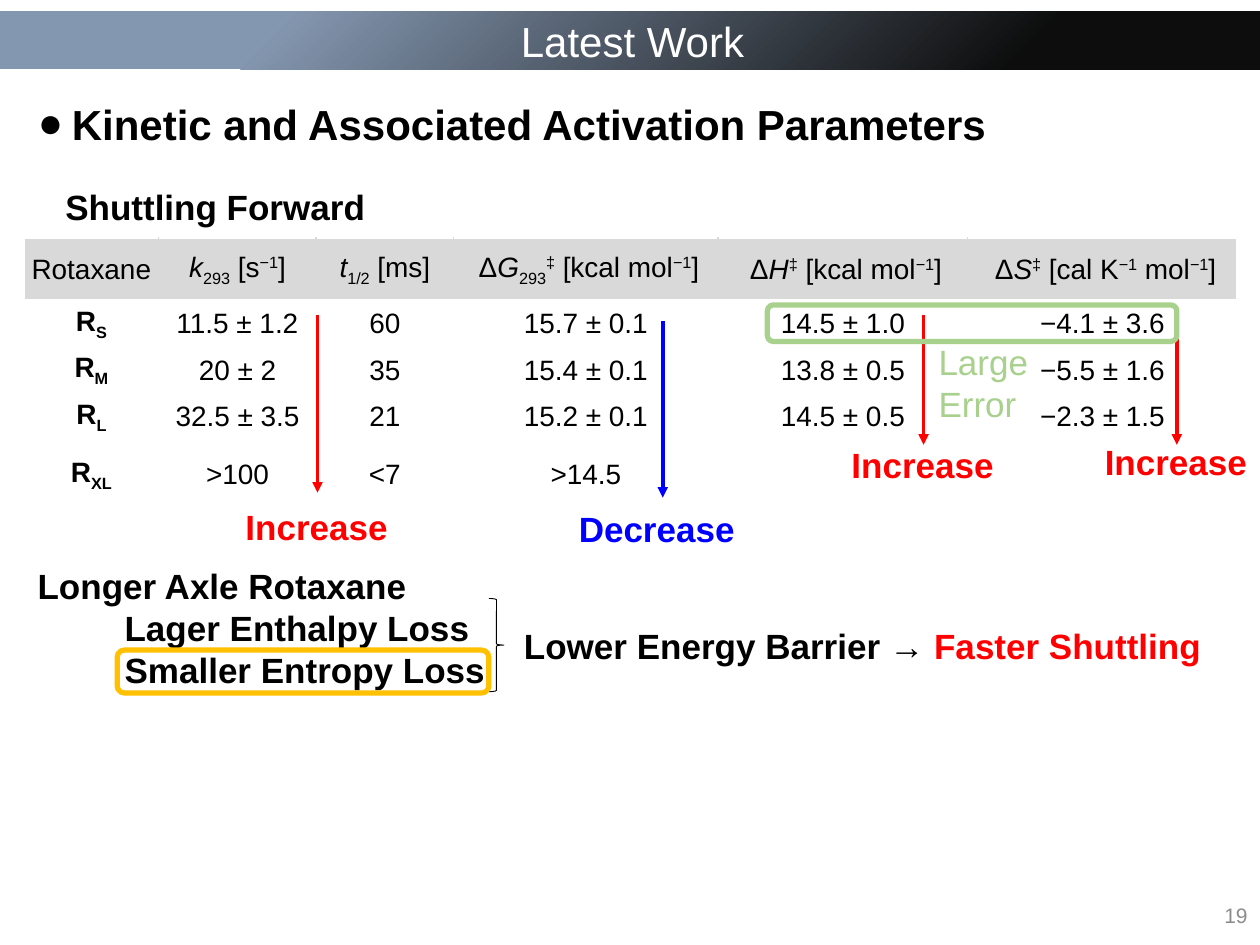
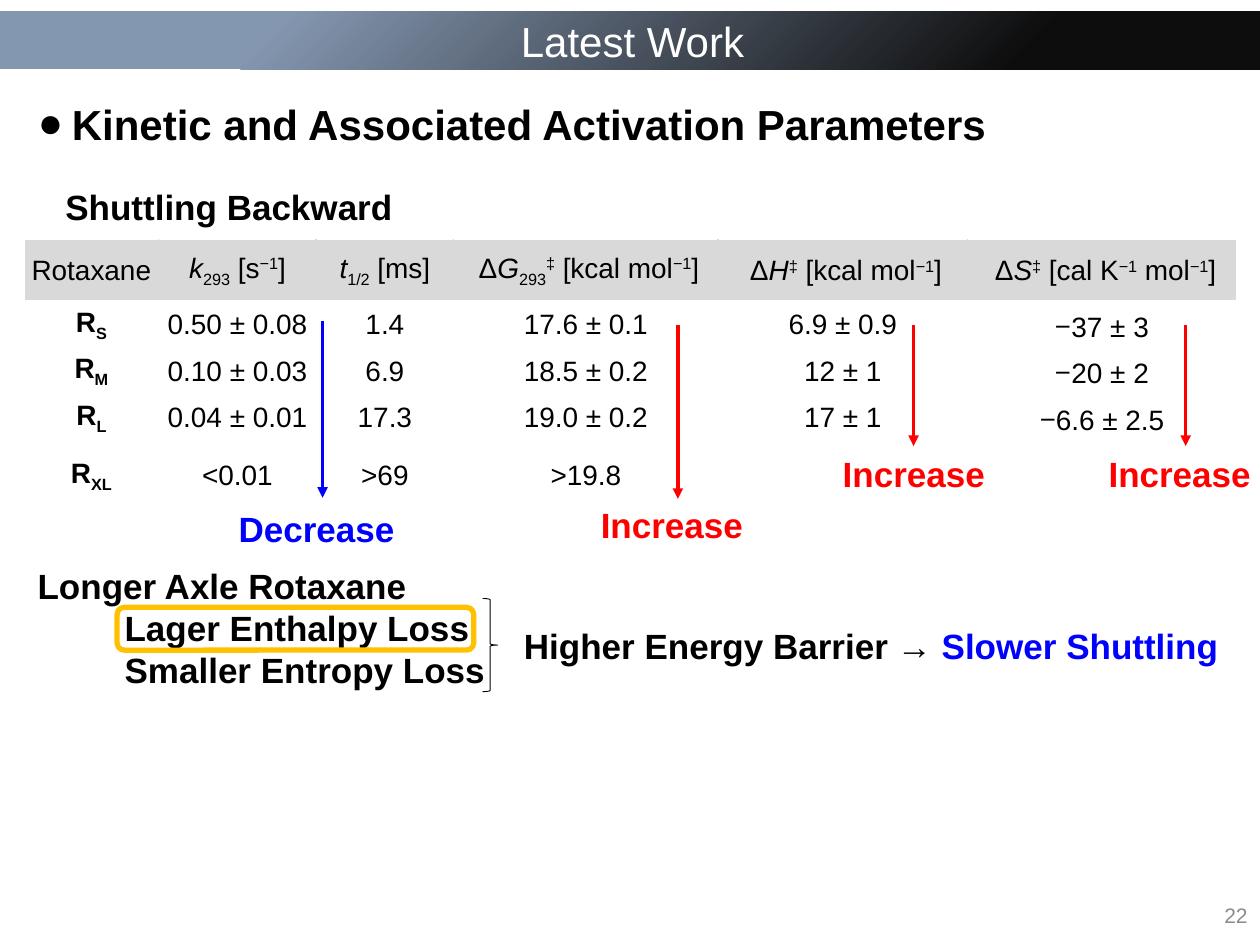
from lxml import etree
from pptx import Presentation
from pptx.dml.color import RGBColor
from pptx.enum.shapes import MSO_CONNECTOR, MSO_SHAPE
from pptx.enum.text import MSO_ANCHOR, MSO_AUTO_SIZE, PP_ALIGN
from pptx.oxml.ns import qn
from pptx.util import Inches, Pt

CENTER, RIGHT, LEFT = PP_ALIGN.CENTER, PP_ALIGN.RIGHT, PP_ALIGN.LEFT
MIDDLE, TOP = MSO_ANCHOR.MIDDLE, MSO_ANCHOR.TOP
NO_AUTOFIT = MSO_AUTO_SIZE.NONE
ROUND_RECT, BRACE = MSO_SHAPE.ROUNDED_RECTANGLE, MSO_SHAPE.RIGHT_BRACE
STRAIGHT = MSO_CONNECTOR.STRAIGHT

SLIDE_W, SLIDE_H = 10, 7.5
FONT, MINUS_FONT = "Arial", "Noto Sans CJK JP"
COLORS = {"black": "000000", "white": "FFFFFF", "header": "D9D9D9",
          "band_start": "8497B0", "band_end": "0D0D0D", "number": "8C8C8C",
          "red": "FF0000", "blue": "0000FF", "green": "A9D18E",
          "amber": "FFC000"}

TITLE = "Latest Work"
HEADING = "Kinetic and Associated Activation Parameters"
COLUMN_WIDTHS = [1.07, 1.25, 1.09, 2.1, 1.98, 2.14]
ROW_HEIGHTS = [0.49, 0.37, 0.37, 0.37, 0.55]
# Each cell is a list of (text, style) runs
HEADER = [
    [("Rotaxane", "")],
    [("k", "italic"), ("293", "sub"), (" [s", ""), ("−1", "sup"), ("]", "")],
    [("t", "italic"), ("1/2", "sub"), (" [ms]", "")],
    [(" Δ", ""), ("G", "italic"), ("293", "sub"), ("‡", "sup"),
     (" [kcal mol", ""), ("−1", "sup"), ("]", "")],
    [(" Δ", ""), ("H", "italic"), ("‡", "sup"), (" [kcal mol", ""),
     ("−1", "sup"), ("]", "")],
    [(" Δ", ""), ("S", "italic"), ("‡", "sup"), (" [cal K", ""),
     ("−1", "sup"), (" mol", ""), ("−1", "sup"), ("]", "")],
]
ROTAXANES = ["S", "M", "L", "XL"]
CONCLUSION = ["Longer Axle Rotaxane", "Lager Enthalpy Loss",
              "Smaller Entropy Loss"]
TRENDS = {"Increase": ("red", 1.34), "Decrease": ("blue", 1.45)}

SLIDES = [
    {"number": "19", "direction": "Shuttling Forward", "direction_w": 2.6,
     "table_top": 1.89, "minus_font": FONT,
     "values": [
         ["11.5 ± 1.2", "60", "15.7 ± 0.1", "14.5 ± 1.0", "−4.1 ± 3.6"],
         ["20 ± 2", "35", "15.4 ± 0.1", "13.8 ± 0.5", "−5.5 ± 1.6"],
         ["32.5 ± 3.5", "21", "15.2 ± 0.1", "14.5 ± 0.5", "−2.3 ± 1.5"],
         [">100", "<7", ">14.5", "", ""]],
     # trend, arrow x, arrow top, arrow bottom, label centre, label top
     "trends": [("Increase", 2.52, 2.5, 3.91, 2.52, 3.96),
                ("Decrease", 5.26, 2.55, 3.95, 5.22, 3.98),
                ("Increase", 7.33, 2.5, 3.53, 7.33, 3.47),
                ("Increase", 9.34, 2.5, 3.53, 9.34, 3.45)],
     "error": {"frame": (6.09, 2.42, 3.25, 0.29), "label": ["Large", "Error"],
               "label_at": (7.35, 2.65, 0.92, 0.77)},
     "brace_left": 3.88, "key_loss": (0.93, 5.16, 2.95, 0.34),
     "barrier": "Lower Energy Barrier", "barrier_w": 3.05,
     "verdict": ("Faster Shuttling", "red"), "verdict_at": (6.96, 4.91, 2.69, 0.44)},
    {"number": "22", "direction": "Shuttling Backward", "direction_w": 2.82,
     "table_top": 1.9, "minus_font": MINUS_FONT,
     "values": [
         ["0.50 ± 0.08", "1.4", "17.6 ± 0.1", "6.9 ± 0.9", "−37 ± 3"],
         ["0.10 ± 0.03", "6.9", "18.5 ± 0.2", "12 ± 1", "−20 ± 2"],
         ["0.04 ± 0.01", "17.3", "19.0 ± 0.2", "17 ± 1", "−6.6 ± 2.5"],
         ["<0.01", ">69", ">19.8", "", ""]],
     "trends": [("Decrease", 2.56, 2.55, 3.95, 2.52, 3.98),
                ("Increase", 7.25, 2.58, 3.54, 7.26, 3.54),
                ("Increase", 9.41, 2.58, 3.54, 9.37, 3.54),
                ("Increase", 5.38, 2.58, 3.96, 5.34, 3.95)],
     "error": None,
     "brace_left": 3.83, "key_loss": (0.93, 4.82, 2.83, 0.34),
     "barrier": "Higher Energy Barrier", "barrier_w": 3.12,
     "verdict": ("Slower Shuttling", "blue"), "verdict_at": (7.02, 4.91, 2.77, 0.44)},
]


def rgb(name):
    return RGBColor.from_string(COLORS[name])


def inches(box):
    return [Inches(length) for length in box]


def add_run(paragraph, text, size, color="black", bold=False, style="", font=FONT):
    run = paragraph.add_run()
    run.text = text
    run.font.name = font
    run.font.size = Pt(size)
    run.font.bold = bold
    run.font.color.rgb = rgb(color)
    if style == "italic":
        run.font.italic = True
    elif style:
        offset = {"sub": "-25000", "sup": "30000"}[style]
        run.font._element.set("baseline", offset)


def add_lines(slide, box, lines, size=20, color="black", bold=True, wrap=False):
    """Add a text box with one paragraph per line and return its frame."""
    frame = slide.shapes.add_textbox(*inches(box)).text_frame
    frame.word_wrap = wrap
    for index, line in enumerate(lines):
        paragraph = frame.add_paragraph() if index else frame.paragraphs[0]
        add_run(paragraph, line, size, color, bold)
    return frame


def add_outline(slide, preset, box, color, width):
    outline = slide.shapes.add_shape(preset, *inches(box))
    outline.shadow.inherit = False
    outline.fill.background()
    outline.line.color.rgb = rgb(color)
    outline.line.width = Pt(width)


def place(placeholder, box, anchor):
    placeholder.left, placeholder.top, placeholder.width, placeholder.height = inches(box)
    frame = placeholder.text_frame
    frame.auto_size = NO_AUTOFIT
    frame.vertical_anchor = anchor
    return frame


def add_frame_parts(slide, number):
    """Fill the title band, the bulleted heading and the page number."""
    band = slide.shapes.title
    frame = place(band, (-0.01, 0.09, SLIDE_W + 0.01, 0.46), MIDDLE)
    frame.margin_left, frame.margin_right = Inches(0.15), Inches(0.1)
    frame.margin_top = frame.margin_bottom = 0
    frame.paragraphs[0].alignment = CENTER
    add_run(frame.paragraphs[0], TITLE, 24, "white")
    band.fill.gradient()
    band.fill.gradient_angle = 315
    stops = [("band_start", 0.22), ("band_end", 0.81)]
    for stop, (color, position) in zip(band.fill.gradient_stops, stops):
        stop.color.rgb = rgb(color)
        stop.position = position

    heading = place(slide.placeholders[1], (0.2, 0.73, 9.8, 0.5), TOP).paragraphs[0]
    properties = heading._p.get_or_add_pPr()
    hang = Inches(0.27)
    properties.set("marL", str(hang))
    properties.set("indent", str(-hang))
    etree.SubElement(properties, qn("a:buFont"), typeface=FONT)
    etree.SubElement(properties, qn("a:buChar"), char="●")
    heading.space_before = Pt(0)
    heading.alignment = LEFT
    add_run(heading, HEADING, 24, bold=True)

    width, height = 2.25, 0.4
    frame = add_lines(slide, (SLIDE_W - width, SLIDE_H - height - 0.04, width, height),
                      [number], 12, "number", False, wrap=True)
    frame.vertical_anchor = MIDDLE
    frame.paragraphs[0].alignment = RIGHT


def set_borders(cell, sides):
    properties = cell._tc.get_or_add_tcPr()
    for side in "LRTB":
        line = etree.SubElement(properties, qn("a:ln" + side), w=str(Pt(1)))
        fill = etree.SubElement(line, qn("a:solidFill"))
        etree.SubElement(fill, qn("a:srgbClr"), val=COLORS[sides.get(side, "white")])


def value_runs(value, minus_font):
    """Split a leading minus sign off when it has a font of its own."""
    if value.startswith("−") and minus_font != FONT:
        return [("−", "", minus_font), (value[1:], "", FONT)]
    return [(value, "", FONT)] if value else []


def add_parameters(slide, top, values, minus_font):
    box = (0.19, top, sum(COLUMN_WIDTHS), sum(ROW_HEIGHTS))
    rows = [[[(text, style, FONT) for text, style in cell] for cell in HEADER]]
    for rotaxane, row in zip(ROTAXANES, values):
        name = [("R", "", FONT), (rotaxane, "sub", FONT)]
        rows.append([name] + [value_runs(value, minus_font) for value in row])

    table = slide.shapes.add_table(len(rows), len(HEADER), *inches(box)).table
    table.first_row = table.horz_banding = False
    for column, width in zip(table.columns, COLUMN_WIDTHS):
        column.width = Inches(width)
    last = len(HEADER) - 1
    for r, row in enumerate(rows):
        table.rows[r].height = Inches(ROW_HEIGHTS[r])
        for c, runs in enumerate(row):
            cell = table.cell(r, c)
            sides = {}
            if r == 0:
                sides = {"L": "header" if c else "white",
                         "R": "header" if c < last else "white"}
            set_borders(cell, sides)
            cell.fill.solid()
            cell.fill.fore_color.rgb = rgb("white" if r else "header")
            cell.vertical_anchor = MIDDLE
            cell.margin_left = cell.margin_right = cell.margin_top = Inches(0.01)
            cell.margin_bottom = 0
            paragraph = cell.text_frame.paragraphs[0]
            paragraph.alignment = CENTER
            for text, style, font in runs:
                add_run(paragraph, text, 16, bold=r > 0 and c == 0, style=style, font=font)


def add_trend(slide, trend, x, top, bottom, label_center, label_top):
    color, width = TRENDS[trend]
    arrow = slide.shapes.add_connector(STRAIGHT, *inches((x, top, x, bottom)))
    arrow.line.color.rgb = rgb(color)
    arrow.line.width = Pt(2)
    etree.SubElement(arrow.line._get_or_add_ln(), qn("a:tailEnd"), type="triangle")
    etree.SubElement(arrow._element.spPr, qn("a:effectLst"))
    add_lines(slide, (label_center - width / 2, label_top, width, 0.44), [trend], color=color)


def add_conclusion(slide, content):
    frame = add_lines(slide, (0.2, 4.43, 3.98, 1.1), CONCLUSION, wrap=True)
    for loss in frame.paragraphs[1:]:
        loss._p.get_or_add_pPr().set("marL", str(Inches(0.69)))
    add_outline(slide, BRACE, (content["brace_left"], 4.75, 0.12, 0.74), "black", 0.5)
    add_lines(slide, (4.06, 4.91, content["barrier_w"], 0.44), [content["barrier"]])
    add_outline(slide, ROUND_RECT, content["key_loss"], "amber", 3)
    verdict, color = content["verdict"]
    frame = add_lines(slide, content["verdict_at"], ["→ "])
    add_run(frame.paragraphs[0], verdict, 20, color, bold=True)


def main():
    deck = Presentation()
    deck.slide_width, deck.slide_height = Inches(SLIDE_W), Inches(SLIDE_H)
    for content in SLIDES:
        slide = deck.slides.add_slide(deck.slide_layouts[1])
        add_frame_parts(slide, content["number"])
        add_parameters(slide, content["table_top"], content["values"], content["minus_font"])
        add_lines(slide, (0.42, 1.42, content["direction_w"], 0.44), [content["direction"]])
        for trend in content["trends"]:
            add_trend(slide, *trend)
        error = content["error"]
        if error:
            add_outline(slide, ROUND_RECT, error["frame"], "green", 3)
            add_lines(slide, error["label_at"], error["label"], color="green", bold=False)
        add_conclusion(slide, content)
    deck.save("out.pptx")


if __name__ == "__main__":
    main()
